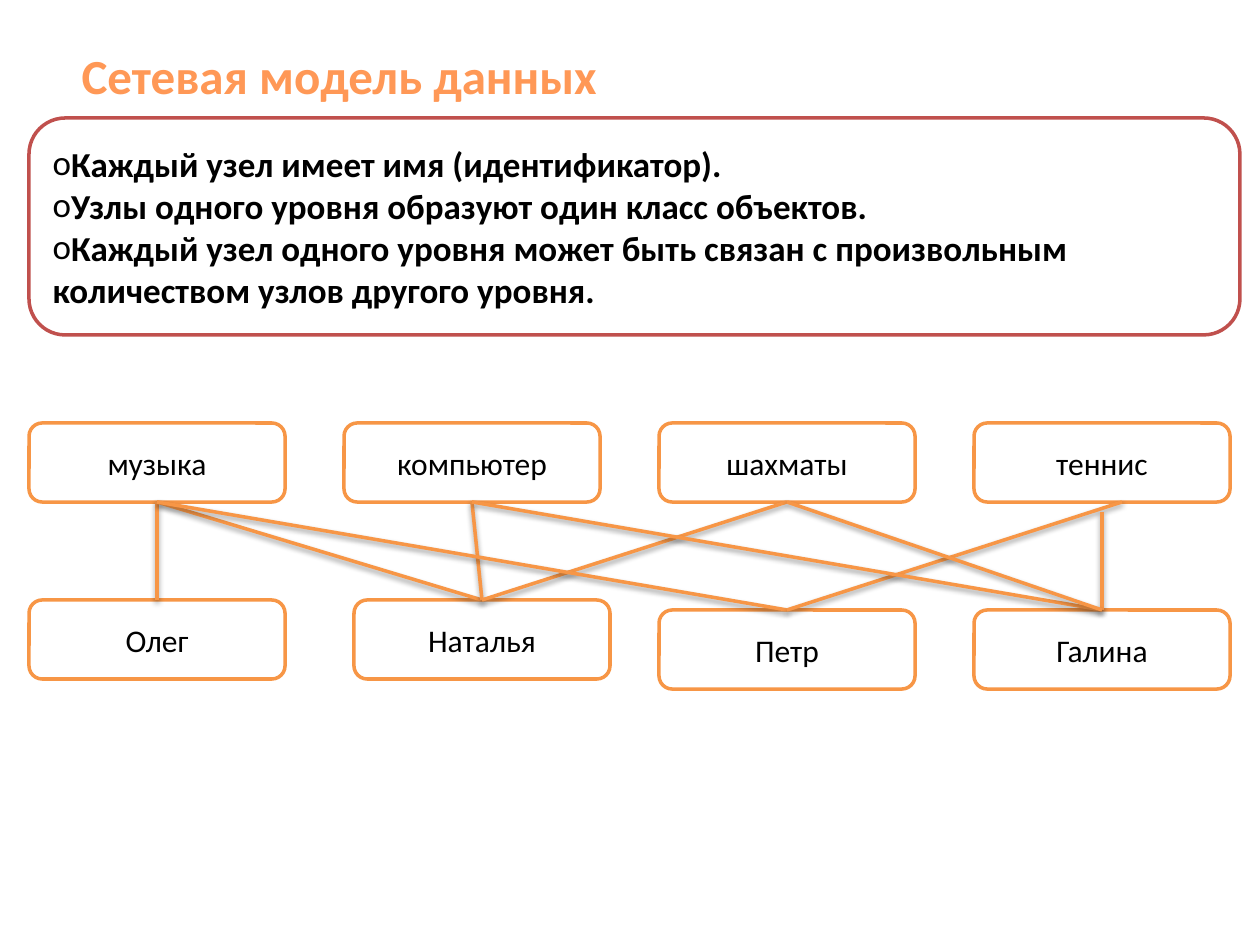
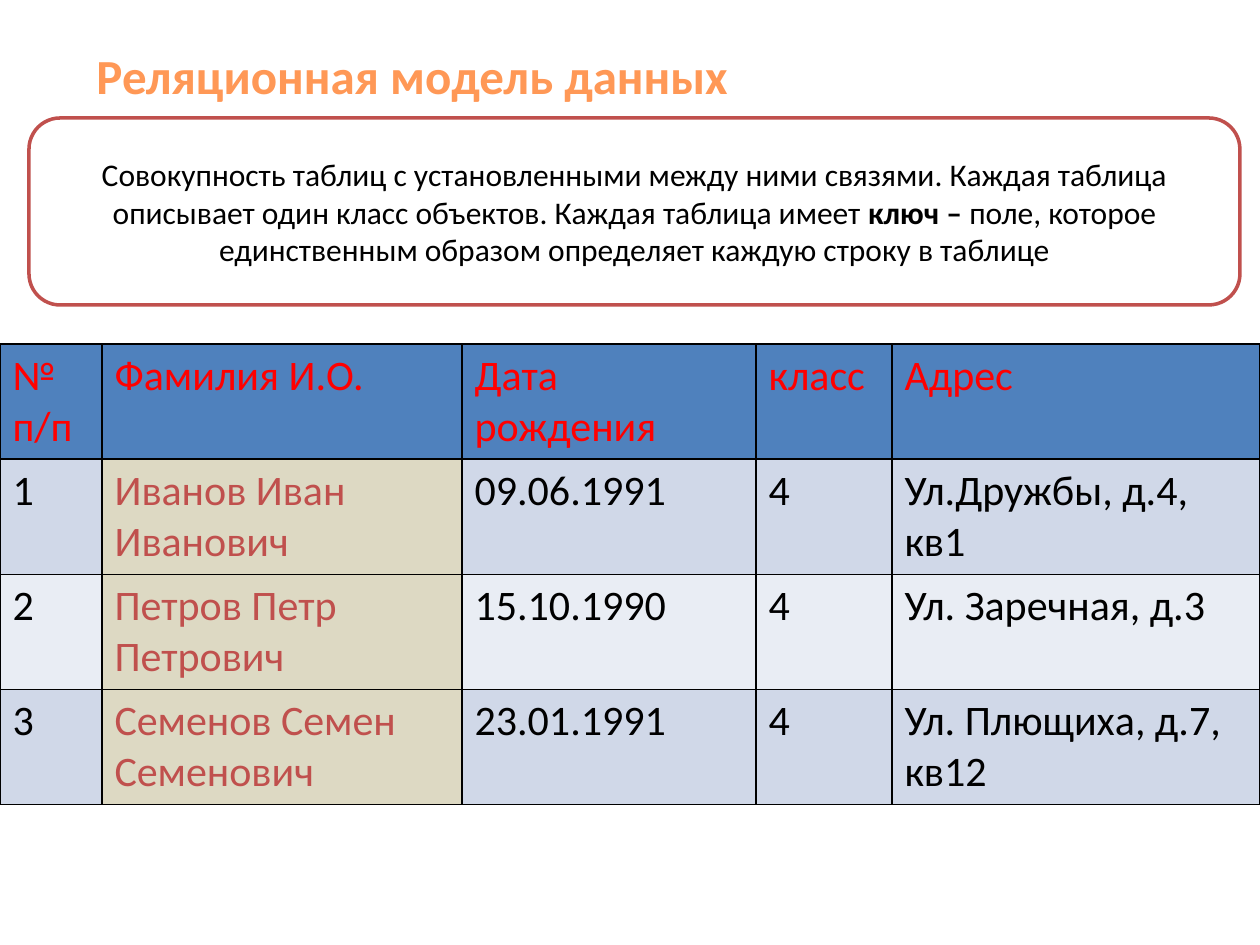
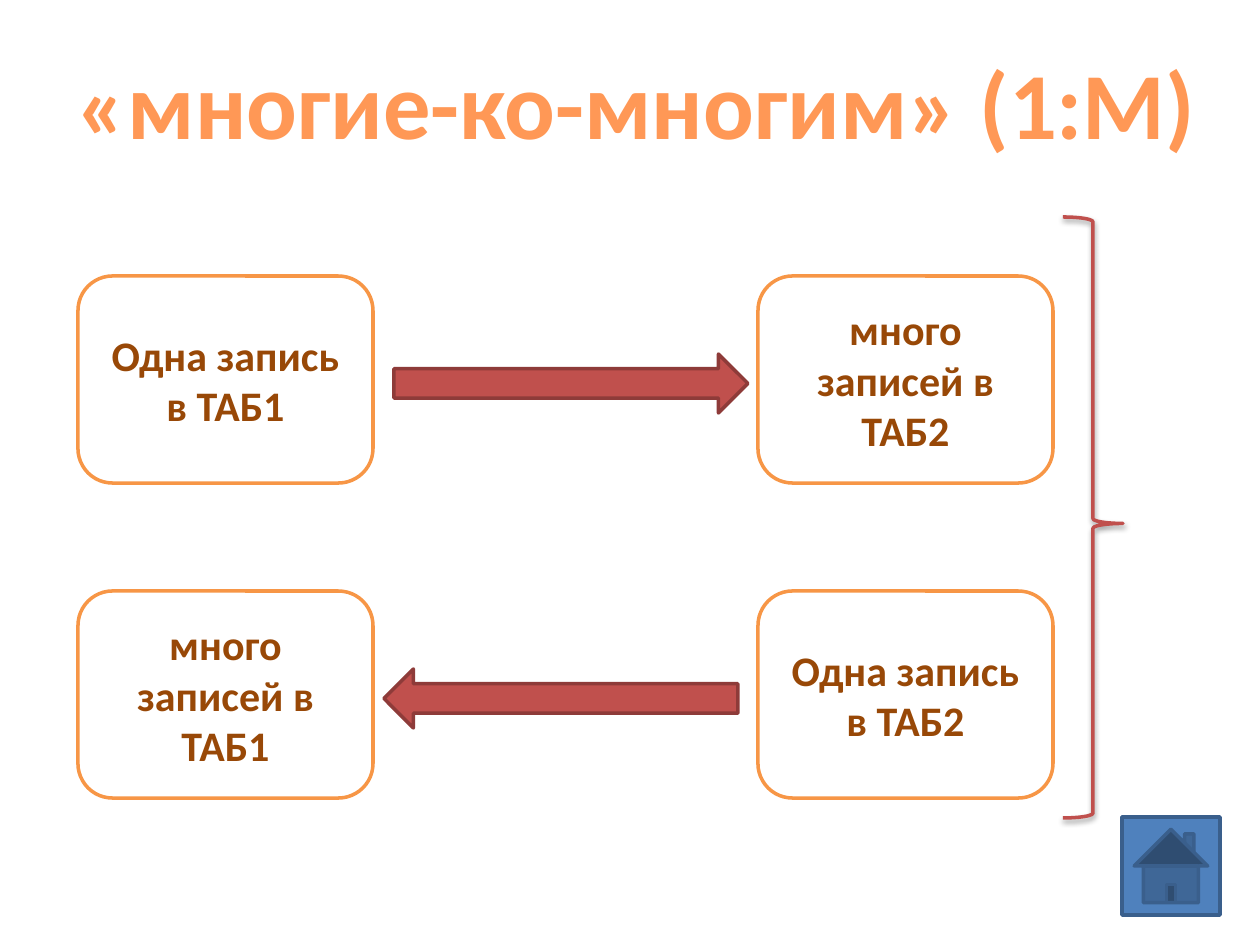
from lxml.etree import SubElement
from pptx import Presentation
from pptx.dml.color import RGBColor
from pptx.enum.shapes import MSO_CONNECTOR, MSO_SHAPE
from pptx.enum.text import MSO_ANCHOR, MSO_AUTO_SIZE, PP_ALIGN
from pptx.oxml.ns import qn
from pptx.util import Emu, Pt

HUES = {
    "title": "FF9856", "black": "000000", "white": "FFFFFF", "red": "C0504D",
    "wine": "8E3B39", "orange": "F79646", "brown": "984807", "blue": "4F81BD",
    "navy": "3A5F8C", "alert": "FF0000", "odd": "D0D8E8", "even": "E9EDF4",
    "sand": "DDD9C3",
}
FACE = "Calibri"
NODE = {"size": Pt(18), "bold": False}
CARD = {"size": Pt(24), "bold": True}
LIST = {"size": Pt(20), "bold": True}
CELL = {"size": Pt(24), "bold": False}
FRAME = {"word_wrap": True, "auto_size": MSO_AUTO_SIZE.NONE,
         "vertical_anchor": MSO_ANCHOR.MIDDLE}
HEAD = {"word_wrap": False, "auto_size": MSO_AUTO_SIZE.NONE,
        "vertical_anchor": MSO_ANCHOR.TOP}
TIGHT = {"space_before": Pt(0), "space_after": Pt(0)}

RULES = ["Каждый узел имеет имя (идентификатор).",
         "Узлы одного уровня образуют один класс объектов.",
         "Каждый узел одного уровня может быть связан с произвольным "
         "количеством узлов другого уровня."]
HOBBIES = ["музыка", "компьютер", "шахматы", "теннис"]
PEOPLE = [("Олег", 29, 600), ("Наталья", 354, 600),
          ("Петр", 659, 610), ("Галина", 974, 610)]
LINKS = [(0, 0, 0, 0), (0, 1, 0, 0), (1, 1, 0, 0), (2, 1, 0, 0), (0, 2, 0, 0),
         (3, 2, 20, 0), (1, 3, 0, 0), (3, 3, 0, 10), (2, 3, 0, 0)]
ABOUT = [("Совокупность таблиц с установленными между ними связями. Каждая "
          "таблица описывает один класс объектов. Каждая таблица имеет ", False),
         ("ключ – ", True),
         ("поле, которое единственным образом определяет каждую строку "
          "в таблице", False)]
ROWS = [["№\nп/п", "Фамилия И.О.", "Дата рождения", "класс", "Адрес"],
        ["1", "Иванов Иван Иванович", "09.06.1991", "4", "Ул.Дружбы, д.4, кв1"],
        ["2", "Петров Петр Петрович", "15.10.1990", "4", "Ул. Заречная, д.3"],
        ["3", "Семенов Семен Семенович", "23.01.1991", "4",
         "Ул. Плющиха, д.7, кв12"]]
WIDTHS = [102, 360, 294, 136, 368]
CARDS = [("Одна запись в ТАБ1", 78, 276), ("много записей в ТАБ2", 758, 276),
         ("много записей в ТАБ1", 78, 591), ("Одна запись в ТАБ2", 758, 591)]


def px(num):
    """Turn pixels into EMU."""
    return Emu(round(num * 914400 / 126))


def hue(name):
    """Give the named colour."""
    return RGBColor.from_string(HUES[name])


def style(item, form):
    """Set each attribute in a dict of format values."""
    for key, val in form.items():
        setattr(item, key, val)


def place(item, box):
    """Move and size an item."""
    style(item, dict(zip(("left", "top", "width", "height"), map(px, box))))


def write(frame, paras, font, tint, align=PP_ALIGN.CENTER):
    """Fill a text frame with paragraphs made of (text, bold) runs or plain text."""
    for num, runs in enumerate(paras):
        para = frame.add_paragraph() if num else frame.paragraphs[0]
        style(para, {**TIGHT, "alignment": align})
        if isinstance(runs, str):
            runs = [(runs, font["bold"])]
        for text, bold in runs:
            run = para.add_run()
            run.text = text
            style(run.font, {**font, "name": FACE, "bold": bold})
            run.font.color.rgb = hue(tint)


def shade(item):
    """Give a line or brace its soft shadow below."""
    props = item._element.spPr
    cast = SubElement(SubElement(props, qn("a:effectLst")), qn("a:outerShdw"),
                      blurRad="40000", dist="20000", dir="5400000", rotWithShape="0")
    tone = SubElement(cast, qn("a:srgbClr"), val=HUES["black"])
    SubElement(tone, qn("a:alpha"), val="38000")


def edge(item, tint):
    """Set a two-point outline."""
    item.line.color.rgb = hue(tint)
    item.line.width = Pt(2)


def shape(slide, kind, box, fill, line):
    """Add a preset shape."""
    item = slide.shapes.add_shape(kind, *map(px, box))
    item.shadow.inherit = False
    item.fill.solid()
    item.fill.fore_color.rgb = hue(fill)
    edge(item, line)
    return item


def panel(slide, box, line, paras=(), font=NODE, tint="black"):
    """Add a white rounded box with centred text."""
    item = shape(slide, MSO_SHAPE.ROUNDED_RECTANGLE, box, "white", line)
    style(item.text_frame, FRAME)
    write(item.text_frame, paras, font, tint)


def start(deck, index, text, box, size):
    """Add a slide and set its title."""
    slide = deck.slides.add_slide(deck.slide_layouts[index])
    title = slide.shapes.title
    place(title, box)
    style(title.text_frame, HEAD)
    write(title.text_frame, [text], {"size": Pt(size), "bold": True}, "title")
    return slide


def bullets(slide, box):
    """Fill the body placeholder with the list of rules."""
    body = slide.placeholders[1]
    place(body, box)
    style(body.text_frame, FRAME)
    write(body.text_frame, RULES, LIST, "black", PP_ALIGN.LEFT)
    slide.shapes._spTree.append(body._element)
    for para in body.text_frame.paragraphs:
        props = para._p.get_or_add_pPr()
        props.set("marL", "0")
        props.set("indent", "0")
        SubElement(props, qn("a:buFont"), typeface=FACE)
        SubElement(props, qn("a:buChar"), char="o")


def link(slide, ends):
    """Draw one link between two nodes."""
    item = slide.shapes.add_connector(MSO_CONNECTOR.STRAIGHT, *map(px, ends))
    edge(item, "orange")
    shade(item)


def rule(cell):
    """Draw thin black borders round a cell."""
    props = cell._tc.get_or_add_tcPr()
    for num, side in enumerate(("lnL", "lnR", "lnT", "lnB")):
        line = props.makeelement(qn("a:" + side), {"w": "12700"})
        fill = SubElement(line, qn("a:solidFill"))
        SubElement(fill, qn("a:srgbClr"), val=HUES["black"])
        props.insert(num, line)


def tones(row, col):
    """Choose the fill and text colours of a cell."""
    if row == 0:
        return "blue", "alert"
    if col == 1:
        return "sand", "red"
    return ("odd" if row % 2 else "even"), "black"


def grid(slide, left, top, high):
    """Add the table of pupils."""
    box = (left, top, sum(WIDTHS), high * len(ROWS))
    table = slide.shapes.add_table(len(ROWS), len(WIDTHS), *map(px, box)).table
    for col, wide in zip(table.columns, WIDTHS):
        col.width = px(wide)
    for row, texts in enumerate(ROWS):
        for col, text in enumerate(texts):
            cell = table.cell(row, col)
            fill, tint = tones(row, col)
            cell.fill.solid()
            cell.fill.fore_color.rgb = hue(fill)
            write(cell.text_frame, text.split("\n"), CELL, tint, PP_ALIGN.LEFT)
            rule(cell)


def network(deck):
    """Build the network model slide."""
    slide = start(deck, 1, "Сетевая модель данных", (29, 39, 620, 72), 28)
    panel(slide, (29, 118, 1211, 217), "red")
    bullets(slide, (40, 118, 1189, 217))
    wide, high, top, step = 256, 79, 423, 315
    for num, name in enumerate(HOBBIES):
        panel(slide, (29 + num * step, top, wide, high), "orange", [name])
    for name, left, low in PEOPLE:
        panel(slide, (left, low, wide, high), "orange", [name])
    for hobby, human, right, down in LINKS:
        left, low = PEOPLE[human][1:]
        link(slide, (29 + hobby * step + wide // 2 + right, top + high + down,
                     left + wide // 2, low))


def relations(deck):
    """Build the relational model slide."""
    slide = start(deck, 5, "Реляционная модель данных", (39, 39, 746, 72), 28)
    grid(slide, 0, 344, 113)
    panel(slide, (29, 118, 1211, 187), "red", [ABOUT])


def many(deck):
    """Build the many-to-many slide."""
    slide = start(deck, 5, "«многие-ко-многим» (1:М)", (59, 39, 1155, 127), 54)
    shape(slide, MSO_SHAPE.ACTION_BUTTON_HOME, (1122, 817, 98, 98), "blue", "navy")
    for text, left, top in CARDS:
        panel(slide, (left, top, 295, 207), "orange", [text], CARD, "brown")
    for kind, left, top in ((MSO_SHAPE.RIGHT_ARROW, 394, 354),
                            (MSO_SHAPE.LEFT_ARROW, 384, 669)):
        shape(slide, kind, (left, top, 354, 59), "red", "wine")
    brace = slide.shapes.add_shape(MSO_SHAPE.RIGHT_BRACE,
                                   *map(px, (1063, 217, 60, 601)))
    brace.adjustments[0], brace.adjustments[1] = 0.08, 0.51
    brace.fill.background()
    edge(brace, "red")
    shade(brace)


def main():
    """Build and save the deck."""
    deck = Presentation()
    style(deck, {"slide_width": px(1260), "slide_height": px(945)})
    for build in (network, relations, many):
        build(deck)
    deck.save("out.pptx")


if __name__ == "__main__":
    main()
